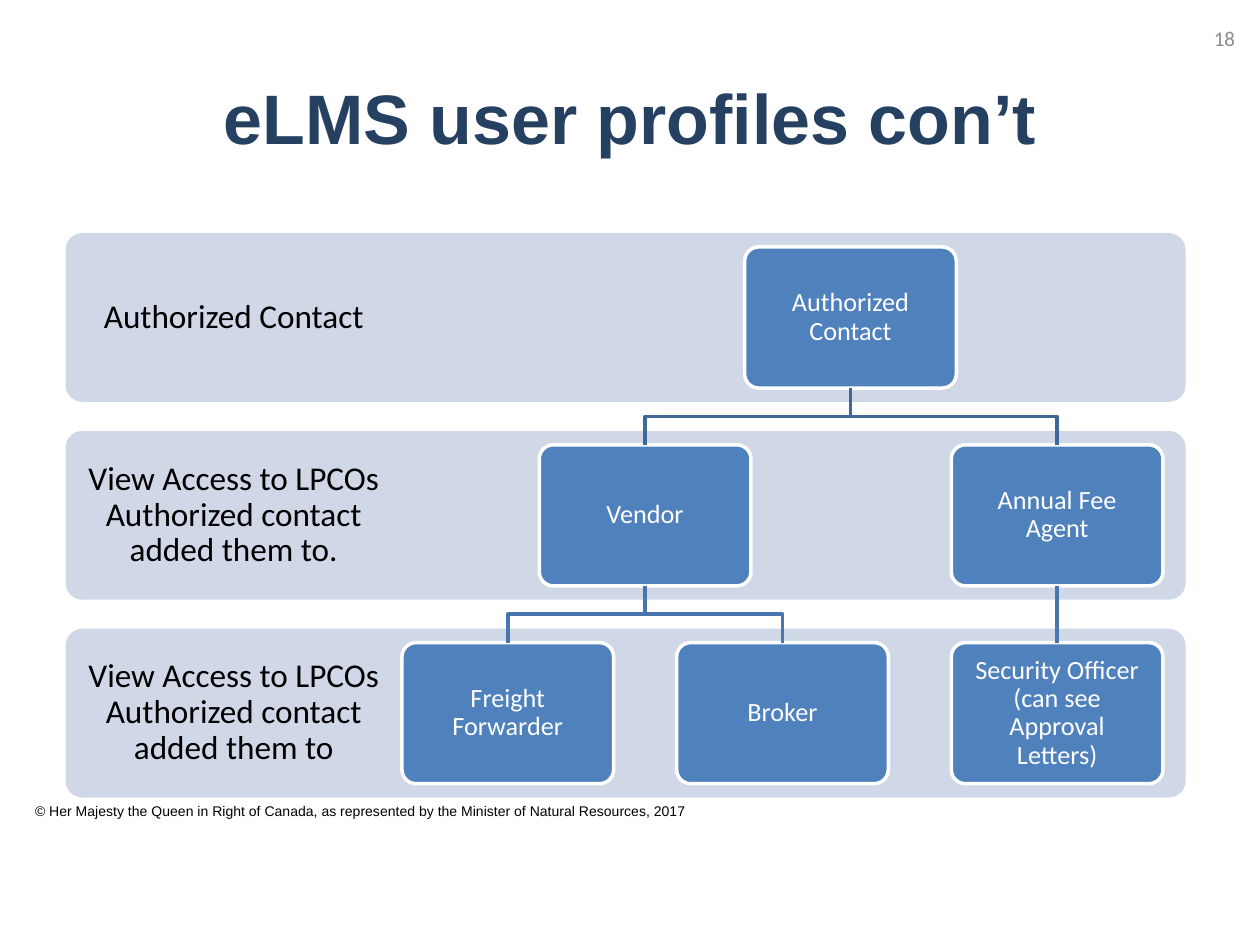
from dataclasses import dataclass
from typing import Any

from lxml.etree import SubElement
from pptx import Presentation
from pptx.dml.color import RGBColor
from pptx.enum.shapes import MSO_CONNECTOR, MSO_SHAPE
from pptx.enum.text import MSO_ANCHOR, MSO_AUTO_SIZE, PP_ALIGN
from pptx.oxml.ns import qn
from pptx.util import Inches, Pt

BAND_LEFT, BAND_WIDTH, BAND_HEIGHT = 0.52, 8.89, 1.34
BAND_TOP, ROW_STEP = 1.85, 1.57
BOX_WIDTH, BOX_HEIGHT, BOX_INSET = 1.68, 1.12, 0.11
BAND_LABELS = [
    "Authorized Contact",
    "View Access to LPCOs Authorized contact added them to.",
    "View Access to LPCOs Authorized contact added them to",
]
PROFILES = [
    ("Authorized Contact", 0, 6.75, None),
    ("Vendor", 1, 5.12, "Authorized Contact"),
    ("Annual Fee Agent", 1, 8.39, "Authorized Contact"),
    ("Freight Forwarder", 2, 4.03, "Vendor"),
    ("Broker", 2, 6.21, "Vendor"),
    ("Security Officer (can see Approval Letters)", 2, 8.39, "Annual Fee Agent"),
]
LINK_COLORS = {1: "3F6797", 2: "4875AC"}


def color(value):
    """Turn a hex string into a colour."""
    return RGBColor.from_string(value)


@dataclass
class ProfileSlide:
    """Holds the slide and its style and draws each kind of element."""

    slide: Any
    body_font: str = "Calibri"
    head_font: str = "Arial"
    band_fill: str = "D0D8E8"
    box_fill: str = "4F81BD"

    def set_text(self, shape, text, size, ink, font, align, inset=None, bold=False):
        """Put one formatted paragraph in a shape."""
        frame = shape.text_frame
        frame.word_wrap = True
        frame.vertical_anchor = MSO_ANCHOR.MIDDLE
        frame.text = text
        para = frame.paragraphs[0]
        para.alignment = align
        if inset is not None:
            frame.margin_left = frame.margin_right = Inches(inset)
            frame.margin_top = frame.margin_bottom = Inches(inset)
            para.line_spacing = 0.9
        span = para.runs[0].font
        span.name, span.size, span.bold = font, Pt(size), bold
        span.color.rgb = color(ink)

    def title(self, text):
        """Fill and place the title placeholder."""
        title = self.slide.shapes.title
        title.left, title.top = Inches(0.5), Inches(0.3)
        title.width, title.height = Inches(9), Inches(1.25)
        self.set_text(title, text, 40, "254061", self.head_font, PP_ALIGN.CENTER, bold=True)

    def text(self, text, place, size, ink, font, align, inset=None):
        """Add a text box."""
        box = self.slide.shapes.add_textbox(*map(Inches, place))
        self.set_text(box, text, size, ink, font, align, inset)
        return box

    def rounded(self, place, fill):
        """Add a plain rounded rectangle."""
        shape = self.slide.shapes.add_shape(MSO_SHAPE.ROUNDED_RECTANGLE, *map(Inches, place))
        shape.adjustments[0] = 0.1
        shape.shadow.inherit = False
        shape.fill.solid()
        shape.fill.fore_color.rgb = color(fill)
        shape.line.fill.background()
        return shape

    def band(self, row, label):
        """Add a row band with its label."""
        top = BAND_TOP + row * ROW_STEP
        self.rounded((BAND_LEFT, top, BAND_WIDTH, BAND_HEIGHT), self.band_fill)
        self.text(label, (BAND_LEFT, top, 2.67, BAND_HEIGHT), 19, "000000",
                  self.body_font, PP_ALIGN.CENTER, 0.15)

    def profile(self, name, row, center):
        """Add a profile box centred on a column."""
        top = BAND_TOP + row * ROW_STEP + BOX_INSET
        box = self.rounded((center - BOX_WIDTH / 2, top, BOX_WIDTH, BOX_HEIGHT), self.box_fill)
        box.line.color.rgb = color("FFFFFF")
        box.line.width = Pt(2)
        self.set_text(box, name, 15, "FFFFFF", self.body_font, PP_ALIGN.CENTER, 0.09)
        return box

    def link(self, parent, child, ink):
        """Join a parent box to a child box below it."""
        start_x, start_y = parent.left + parent.width // 2, parent.top + parent.height
        end_x, end_y = child.left + child.width // 2, child.top
        if start_x == end_x:
            line = self.slide.shapes.add_connector(
                MSO_CONNECTOR.STRAIGHT, start_x, start_y, end_x, end_y)
            line.begin_connect(parent, 2)
            line.end_connect(child, 0)
            SubElement(line._element.spPr, qn("a:effectLst"))
        else:
            middle = (start_y + end_y) // 2
            builder = self.slide.shapes.build_freeform(start_x, start_y)
            builder.add_line_segments(
                [(start_x, middle), (end_x, middle), (end_x, end_y)], close=False)
            line = builder.convert_to_shape()
            line.fill.background()
            line.shadow.inherit = False
        line.line.color.rgb = color(ink)
        line.line.width = Pt(2)


def main():
    """Build and save the user profile slide."""
    deck = Presentation()
    deck.slide_width, deck.slide_height = Inches(10), Inches(7.5)
    page = ProfileSlide(deck.slides.add_slide(deck.slide_layouts[5]))
    notice = page.text(
        "© Her Majesty the Queen in Right of Canada, as represented by the "
        "Minister of Natural Resources, 2017",
        (0.18, 6.32, 5.44, 0.37), 8, "000000", page.head_font, PP_ALIGN.LEFT)
    notice.text_frame.vertical_anchor = MSO_ANCHOR.TOP
    notice.text_frame.auto_size = MSO_AUTO_SIZE.SHAPE_TO_FIT_TEXT
    page.title("eLMS user profiles con’t")
    page.text("18", (9.39, 0.1, 0.51, 0.4), 12, "8C8C8C", page.body_font, PP_ALIGN.RIGHT)
    for row, label in enumerate(BAND_LABELS):
        page.band(row, label)
    boxes = {}
    for name, row, center, parent in PROFILES:
        boxes[name] = page.profile(name, row, center)
        if parent:
            page.link(boxes[parent], boxes[name], LINK_COLORS[row])
    deck.save("out.pptx")


if __name__ == "__main__":
    main()
